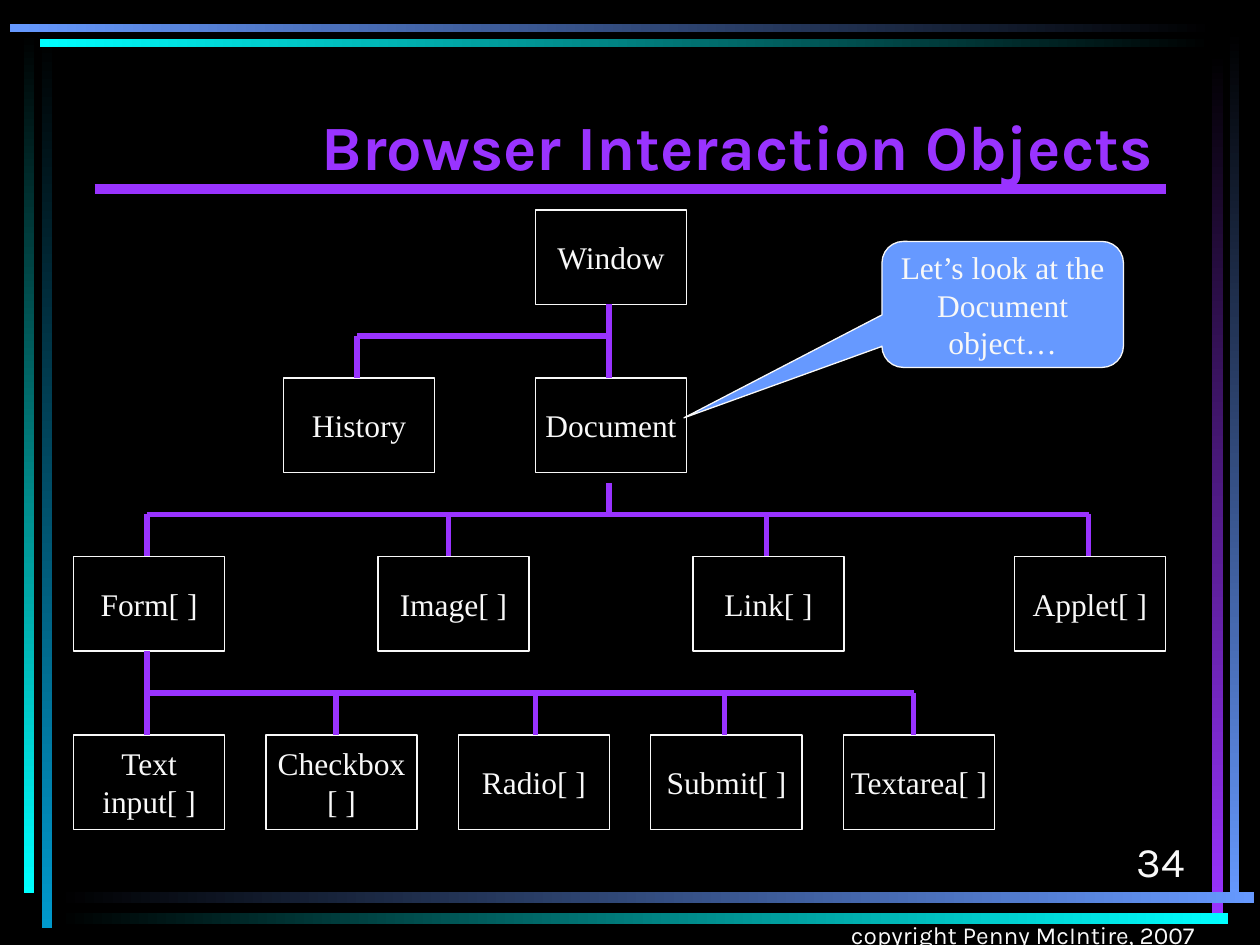
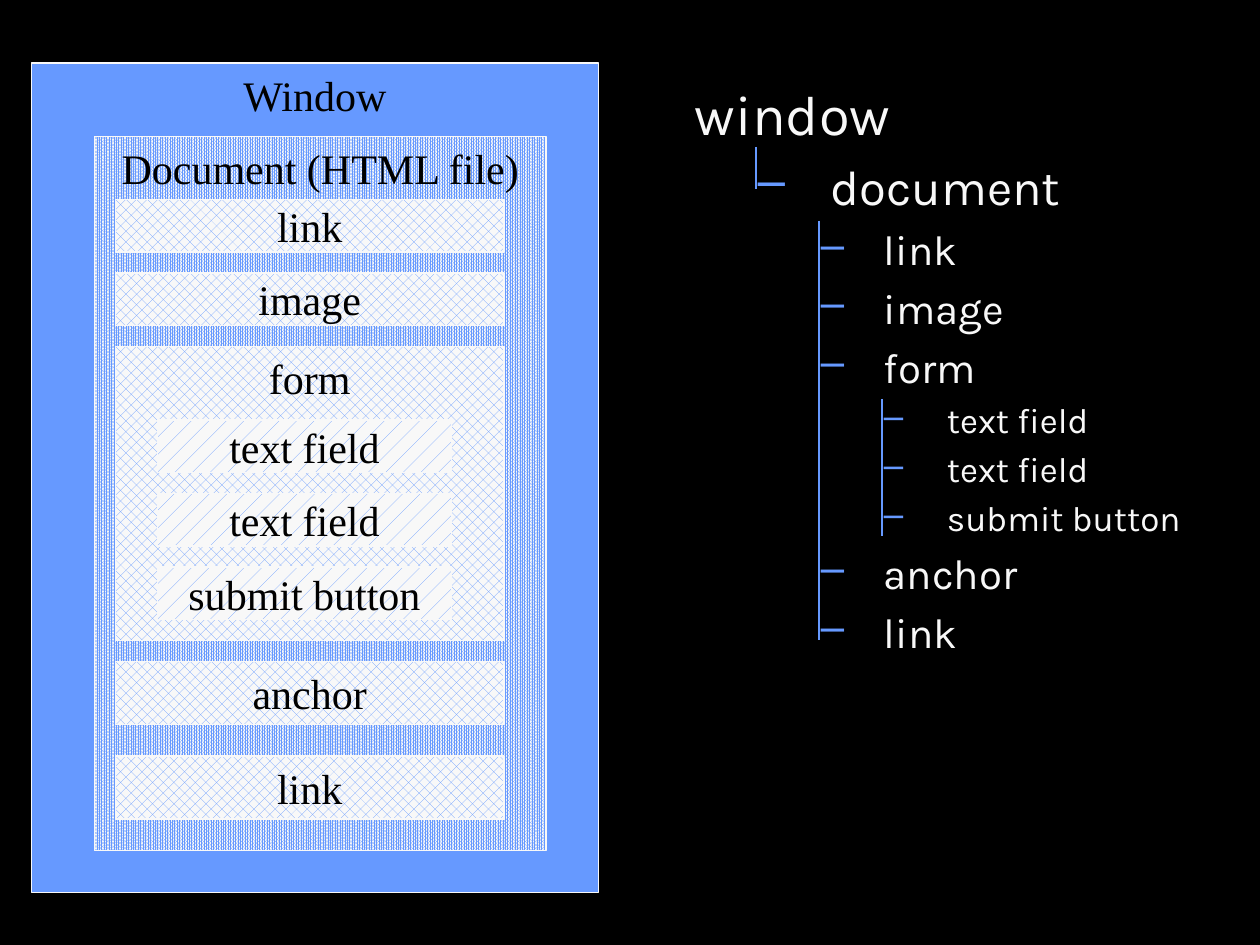
"""Build two slides on browser objects: an object tree and a nested page outline."""
from dataclasses import dataclass
from typing import Optional

from lxml import etree
from pptx import Presentation
from pptx.dml.color import RGBColor
from pptx.enum.dml import MSO_PATTERN_TYPE
from pptx.enum.shapes import MSO_CONNECTOR, MSO_SHAPE
from pptx.enum.text import MSO_ANCHOR, PP_ALIGN
from pptx.oxml.ns import qn
from pptx.util import Inches, Pt

RECTANGLE = MSO_SHAPE.RECTANGLE
CALLOUT = MSO_SHAPE.ROUNDED_RECTANGULAR_CALLOUT
STRAIGHT = MSO_CONNECTOR.STRAIGHT
TOP, MIDDLE, BOTTOM = MSO_ANCHOR.TOP, MSO_ANCHOR.MIDDLE, MSO_ANCHOR.BOTTOM
LEFT, CENTER, RIGHT = PP_ALIGN.LEFT, PP_ALIGN.CENTER, PP_ALIGN.RIGHT
DENSE, MEDIUM, SPARSE = map(MSO_PATTERN_TYPE.from_xml, ("pct90", "pct40", "pct5"))

COLUMNS, ROWS = 120, 90
CELL = Inches(10) / COLUMNS
DOWNWARD, RIGHTWARD, LEFTWARD = 270, 0, 180


@dataclass(frozen=True)
class Theme:
    """Colours, fonts and type sizes of both slides."""
    black: str = "000000"
    white: str = "F8F8F8"
    blue: str = "6699FF"
    purple: str = "9933FF"
    cyan: str = "00FFFF"
    teal: str = "0099CC"
    sans: str = "Karla"
    serif: str = "Times New Roman"
    title_size: int = 36
    number_size: int = 24
    footer_size: int = 14
    node_size: int = 18
    panel_size: int = 24
    outline_sizes: tuple = (32, 28, 24, 20)
    thin: float = 0.75
    branch: float = 3
    rule: float = 6


THEME = Theme()


@dataclass(frozen=True)
class Area:
    """A rectangle in grid columns and rows."""
    column: float
    row: float
    width: float
    height: float

    def lengths(self) -> list:
        """Give left, top, width and height as slide lengths."""
        return [cells(value) for value in (self.column, self.row, self.width, self.height)]


@dataclass(frozen=True)
class Bar:
    """A frame bar that fades in from black."""
    area: Area
    color: str
    direction: int


@dataclass(frozen=True)
class TextStyle:
    """The look of a block of text."""
    font: str
    size: float
    color: str
    align: PP_ALIGN = CENTER
    anchor: MSO_ANCHOR = MIDDLE
    bold: bool = False
    wrap: bool = False


@dataclass(frozen=True)
class NodeRow:
    """A row of tree boxes."""
    row: float
    nodes: dict


@dataclass(frozen=True)
class Branch:
    """A trunk that splits along a bar into drops."""
    trunk: float
    top: float
    bar: float
    bottom: float
    drops: tuple


@dataclass(frozen=True)
class Panel:
    """A nested block of the page sketch."""
    text: str
    area: Area
    pattern: Optional[MSO_PATTERN_TYPE]
    anchor: MSO_ANCHOR = MIDDLE


@dataclass(frozen=True)
class OutlineLevel:
    """Indents of one outline level in inches."""
    margin: float
    hanging: float


FRAME = (
    Bar(Area(4, 3.4, 1, 85), THEME.teal, DOWNWARD),
    Bar(Area(2.28, 3, 1, 82.1), THEME.cyan, DOWNWARD),
    Bar(Area(117.1, 2.9, 0.9, 83.1), THEME.blue, DOWNWARD),
    Bar(Area(115.4, 5, 1.1, 82), THEME.purple, DOWNWARD),
    Bar(Area(5.4, 85, 114, 1), THEME.blue, RIGHTWARD),
    Bar(Area(5.4, 87, 111.6, 1), THEME.cyan, RIGHTWARD),
    Bar(Area(3.8, 3.7, 111.8, 0.75), THEME.cyan, LEFTWARD),
    Bar(Area(1, 2.25, 114.7, 0.8), THEME.blue, LEFTWARD),
)

NODE_WIDTH, NODE_HEIGHT = 14.4, 9
FORM_COLUMN, FORM_STEP = 7, 18.33
FORM_PARTS = ("Text\ninput[ ]", "Checkbox\n[ ]", "Radio[ ]", "Submit[ ]", "Textarea[ ]")
NODE_ROWS = (
    NodeRow(20, {"Window": 51}),
    NodeRow(36, {"History": 27, "Document": 51}),
    NodeRow(53, {"Form[ ]": 7, "Image[ ]": 36, "Link[ ]": 66, "Applet[ ]": 96.6}),
    NodeRow(70, {part: FORM_COLUMN + index * FORM_STEP for index, part in enumerate(FORM_PARTS)}),
)
BRANCHES = (
    Branch(58, 29, 32, 36, (34, 58)),
    Branch(58, 46, 49, 53, (14, 42.7, 73, 103.7)),
    Branch(14, 62, 66, 70, (14, 32, 51, 69, 87)),
)

FIELDS = ("text field", "text field", "submit button")
PANELS = (
    Panel("Window", Area(3, 6, 54, 79), None, TOP),
    Panel("Document (HTML file)", Area(9, 13, 43, 68), DENSE, TOP),
    Panel("link", Area(11, 19, 37, 5), MEDIUM),
    Panel("image", Area(11, 26, 37, 5), MEDIUM),
    Panel("form", Area(11, 33, 37, 28), MEDIUM, TOP),
    *(Panel(text, Area(15, 40 + 7 * index, 28, 5), SPARSE) for index, text in enumerate(FIELDS)),
    Panel("anchor", Area(11, 63, 37, 6), MEDIUM),
    Panel("link", Area(11, 72, 37, 6), MEDIUM),
)

OUTLINE_LEVELS = (
    OutlineLevel(0.67, 0.67),
    OutlineLevel(1.08, 0.58),
    OutlineLevel(1.5, 0.5),
    OutlineLevel(2, 0.5),
)
OUTLINE = (
    (0, "window"), (1, "document"), (2, "link"), (2, "image"), (2, "form"),
    *((3, text) for text in FIELDS), (2, "anchor"), (2, "link"),
)
GUIDES = ((72, 14, 18), (78, 21, 61), (84, 38, 51))


def cells(count: float) -> int:
    """Convert grid cells to a slide length."""
    return round(count * CELL)


def rgb(color: str) -> RGBColor:
    """Convert a hex string to a colour."""
    return RGBColor.from_string(color)


def add_slide(presentation):
    """Add a blank slide with the black background."""
    slide = presentation.slides.add_slide(presentation.slide_layouts[6])
    slide.background.fill.solid()
    slide.background.fill.fore_color.rgb = rgb(THEME.black)
    return slide


def write(shape, text: str, style: TextStyle) -> None:
    """Fill a shape with styled text, one paragraph a line."""
    frame = shape.text_frame
    frame.text = text
    frame.word_wrap = style.wrap
    frame.vertical_anchor = style.anchor
    for paragraph in frame.paragraphs:
        paragraph.alignment = style.align
        font = paragraph.font
        font.name, font.size, font.bold = style.font, Pt(style.size), style.bold
        font.color.rgb = rgb(style.color)


def add_text(slide, text: str, area: Area, style: TextStyle):
    """Add a text box."""
    box = slide.shapes.add_textbox(*area.lengths())
    write(box, text, style)
    return box


def add_box(slide, area: Area, fill: Optional[str] = None, kind: MSO_SHAPE = RECTANGLE):
    """Add a thinly outlined shape, hollow unless a fill is given."""
    shape = slide.shapes.add_shape(kind, *area.lengths())
    shape.shadow.inherit = False
    shape.line.color.rgb = rgb(THEME.white)
    shape.line.width = Pt(THEME.thin)
    if fill:
        shape.fill.solid()
        shape.fill.fore_color.rgb = rgb(fill)
    else:
        shape.fill.background()
    return shape


def add_line(slide, start: tuple, end: tuple, color: str, width: float) -> None:
    """Add a straight line between two grid points."""
    line = slide.shapes.add_connector(STRAIGHT, *map(cells, start + end))
    line.line.color.rgb = rgb(color)
    line.line.width = Pt(width)
    etree.SubElement(line._element.spPr, qn("a:effectLst"))


def add_bar(slide, bar: Bar) -> None:
    """Add one fading frame bar."""
    shape = add_box(slide, bar.area)
    shape.line.fill.background()
    shape.fill.gradient()
    shape.fill.gradient_angle = bar.direction
    for stop, color, position in zip(shape.fill.gradient_stops, (THEME.black, bar.color), (0, 1)):
        stop.color.rgb = rgb(color)
        stop.position = position


def add_branch(slide, branch: Branch) -> None:
    """Add the trunk, bar and drops of a branch."""
    segments = [
        ((branch.trunk, branch.top), (branch.trunk, branch.bar)),
        ((min(branch.drops), branch.bar), (max(branch.drops), branch.bar)),
        *(((drop, branch.bar), (drop, branch.bottom)) for drop in branch.drops),
    ]
    for start, end in segments:
        add_line(slide, start, end, THEME.purple, THEME.branch)


def add_panel(slide, panel: Panel) -> None:
    """Add one block of the page sketch."""
    shape = add_box(slide, panel.area, THEME.blue)
    if panel.pattern is not None:
        shape.fill.patterned()
        shape.fill.pattern = panel.pattern
        shape.fill.fore_color.rgb = rgb(THEME.blue)
        shape.fill.back_color.rgb = rgb(THEME.white)
    write(shape, panel.text, TextStyle(THEME.serif, THEME.panel_size, THEME.black, anchor=panel.anchor))


def add_property(properties, tag: str, **attributes: str):
    """Add an element to paragraph properties, ahead of the font."""
    element = etree.Element(qn(tag), **attributes)
    properties.insert_element_before(element, "a:defRPr")
    return element


def format_outline(paragraph, level: int) -> None:
    """Set size, indent, spacing and dash of an outline paragraph."""
    indent = OUTLINE_LEVELS[level]
    paragraph.level = level
    paragraph.font.size = Pt(THEME.outline_sizes[level])
    properties = paragraph._p.get_or_add_pPr()
    properties.set("marL", str(Inches(indent.margin)))
    properties.set("indent", str(-Inches(indent.hanging)))
    etree.SubElement(add_property(properties, "a:spcBef"), qn("a:spcPct"), val="20000")
    if level:
        etree.SubElement(add_property(properties, "a:buClr"), qn("a:srgbClr"), val=THEME.blue)
        add_property(properties, "a:buChar", char="–")


def build_tree_slide(presentation) -> None:
    """Build the object tree slide."""
    slide = add_slide(presentation)
    for bar in FRAME:
        add_bar(slide, bar)
    add_line(slide, (9, 18), (111, 18), THEME.purple, THEME.rule)
    for text, area, size, color, bold in (
        ("34", Area(89, 79, 25, 6), THEME.number_size, THEME.white, False),
        ("copyright Penny McIntire, 2007", Area(77, 85, 38, 6), THEME.footer_size, THEME.white, False),
        ("Browser Interaction Objects", Area(9, 5, 102, 13), THEME.title_size, THEME.purple, True),
    ):
        add_text(slide, text, area, TextStyle(THEME.sans, size, color, RIGHT, BOTTOM, bold, True))
    callout = add_box(slide, Area(84, 23, 23, 12), THEME.blue, CALLOUT)
    for index, value in enumerate((-1.32, 0.9, 0.17)):
        callout.adjustments[index] = value
    write(callout, "Let’s look at the Document object…",
          TextStyle(THEME.serif, THEME.node_size, THEME.white, wrap=True))
    for node_row in NODE_ROWS:
        for text, column in node_row.nodes.items():
            node = add_box(slide, Area(column, node_row.row, NODE_WIDTH, NODE_HEIGHT))
            write(node, text, TextStyle(THEME.serif, THEME.node_size, THEME.white))
    for branch in BRANCHES:
        add_branch(slide, branch)


def build_outline_slide(presentation) -> None:
    """Build the page sketch and its outline."""
    slide = add_slide(presentation)
    style = TextStyle(THEME.sans, THEME.outline_sizes[0], THEME.white, LEFT, TOP, wrap=True)
    outline = add_text(slide, "\n".join(text for _, text in OUTLINE), Area(65, 7, 51, 67), style)
    for paragraph, (level, _) in zip(outline.text_frame.paragraphs, OUTLINE):
        format_outline(paragraph, level)
    for panel in PANELS:
        add_panel(slide, panel)
    for column, top, bottom in GUIDES:
        add_line(slide, (column, top), (column, bottom), THEME.blue, THEME.thin)


presentation = Presentation()
presentation.slide_width, presentation.slide_height = cells(COLUMNS), cells(ROWS)
build_tree_slide(presentation)
build_outline_slide(presentation)
presentation.save("out.pptx")
